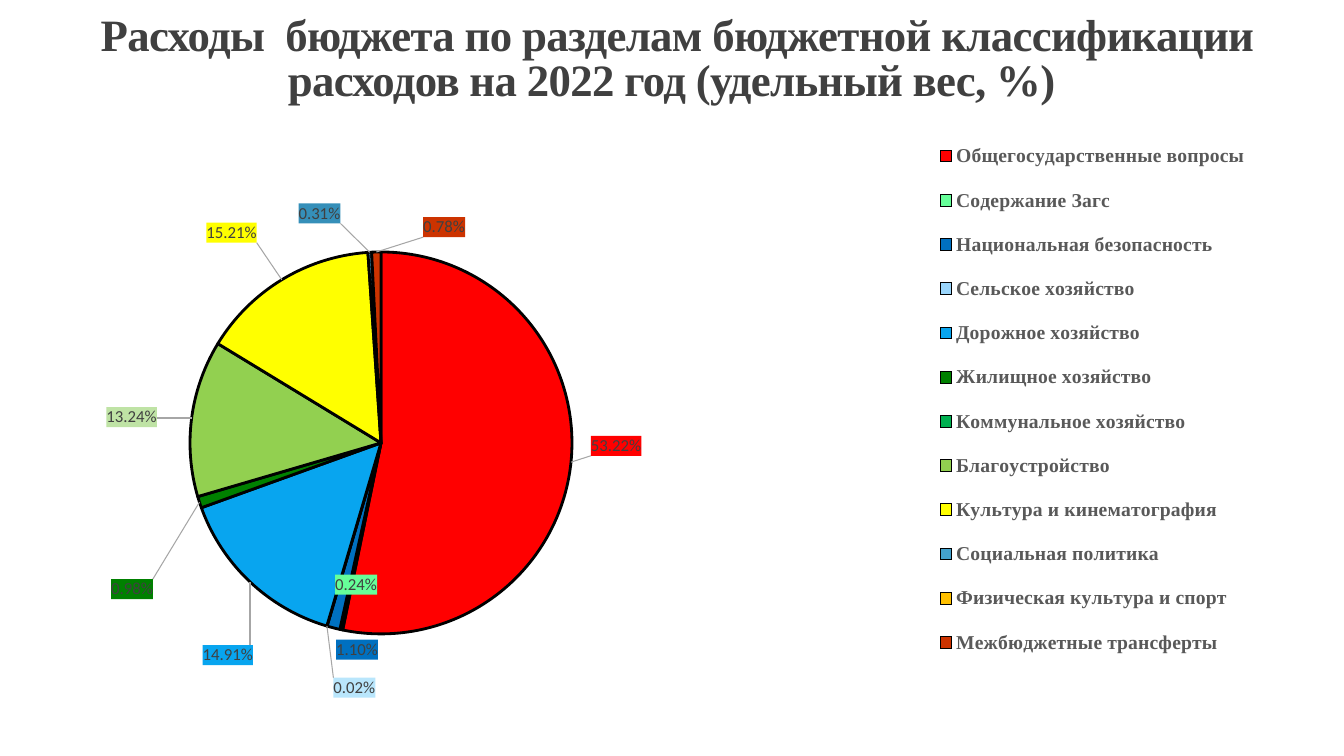
import pptx
import pptx.chart.data
import pptx.dml.color
import pptx.enum.chart
import pptx.enum.text
import pptx.oxml
import pptx.oxml.ns
import pptx.util

PX = 9071
CHART = (0, 103, 1344, 628)
PIE = (190, 252, 382, 382)
LEGEND = (920, 123, 345, 553)
COLORS = {"title": "404040", "legend": "595959", "outline": "000000", "leader": "A6A6A6"}
TITLE = " Расходы  бюджета по разделам бюджетной классификации расходов на 2022 год (удельный вес, %)"

# name, share, slice colour, label colour, label shift in px
SECTIONS = [
    ("Общегосударственные вопросы", 0.5322, "FF0000", "FF0000", (14, -27)),
    ("Содержание Загс", 0.0024, "66FF99", "66FF99", (37, -61)),
    ("Национальная безопасность", 0.011, "0070C0", "0070C0", (46, 6)),
    ("Сельское хозяйство", 0.0002, "9AD5FB", "B9E6FC", (50, 46)),
    ("Дорожное хозяйство", 0.1491, "08A5EF", "08A5EF", (7, 59)),
    ("Жилищное хозяйство", 0.0098, "008000", "008000", (-41, 75)),
    ("Коммунальное хозяйство", 0, "00B050", None, None),
    ("Благоустройство", 0.1324, "92D050", "BFE3A5", (-29, 10)),
    ("Культура и кинематография", 0.1521, "FFFF00", "FFFF00", (-22, -32)),
    ("Социальная политика", 0.0031, "43A2CE", "358FB9", (-50, -23)),
    ("Физическая культура и спорт", 0, "FFC000", None, None),
    ("Межбюджетные трансферты", 0.0078, "CC3300", "CC3300", (68, -9)),
]


def emu(*px):
    """Turn px lengths into EMU."""
    return [v * PX for v in px]


def rgb(value):
    """Return a colour from a hex string."""
    return pptx.dml.color.RGBColor.from_string(value)


def set_font(font, name, size, color, bold=False):
    """Set the main properties of a font."""
    font.name, font.size, font.bold = name, pptx.util.Pt(size), bold
    font.color.rgb = rgb(color)


def c_xml(body):
    """Parse a chart element from its markup."""
    ns = pptx.oxml.ns.nsdecls("c", "a")
    tag, rest = body.split(">", 1)
    return pptx.oxml.parse_xml(f"{tag} {ns}>{rest}")


def layout(x, y, size=None, inner=False):
    """Build a manual layout in fractions of the chart."""
    target = '<c:layoutTarget val="inner"/>' if inner else ""
    modes = '<c:xMode val="edge"/><c:yMode val="edge"/>' if size else ""
    extent = f'<c:w val="{size[0] / CHART[2]:.4f}"/><c:h val="{size[1] / CHART[3]:.4f}"/>' if size else ""
    return c_xml(f'<c:layout><c:manualLayout>{target}{modes}<c:x val="{x / CHART[2]:.4f}"/>'
                 f'<c:y val="{y / CHART[3]:.4f}"/>{extent}</c:manualLayout></c:layout>')


def frame_layout(box, inner=False):
    """Build the layout of a box given in slide px."""
    return layout(box[0] - CHART[0], box[1] - CHART[1], box[2:], inner)


def replace_layout(parent, new, after=None):
    """Put a layout in a chart part in place of its present one."""
    for old in parent.findall(pptx.oxml.ns.qn("c:layout")):
        parent.remove(old)
    if after is None:
        parent.insert(0, new)
    else:
        parent.find(pptx.oxml.ns.qn(after)).addnext(new)


def add_title(s):
    """Add the heading of the slide."""
    tf = s.shapes.add_textbox(*emu(27, 16, 1289, 95)).text_frame
    tf.word_wrap = True
    tf.vertical_anchor = pptx.enum.text.MSO_ANCHOR.BOTTOM
    p = tf.paragraphs[0]
    p.alignment = pptx.enum.text.PP_ALIGN.CENTER
    p.line_spacing = 0.85
    r = p.add_run()
    r.text = TITLE
    set_font(r.font, "Times New Roman", 32, COLORS["title"], True)
    r.font._element.set("spc", "-50")


def style_point(point, color):
    """Fill and outline one slice."""
    point.format.fill.solid()
    point.format.fill.fore_color.rgb = rgb(color)
    point.format.line.color.rgb = rgb(COLORS["outline"])
    point.format.line.width = pptx.util.Pt(2)


def add_label(chart, i, point, fill, shift):
    """Give one slice a filled and shifted label."""
    label = point.data_label
    set_font(label.font, "Calibri", 12, COLORS["title"])
    label.position = pptx.enum.chart.XL_LABEL_POSITION.OUTSIDE_END
    el = chart.element.xpath(f'.//c:dLbl[c:idx/@val="{i}"]')[0]
    replace_layout(el, layout(*shift), "c:idx")
    for old in el.findall(pptx.oxml.ns.qn("c:spPr")):
        el.remove(old)
    el.find(pptx.oxml.ns.qn("c:txPr")).addprevious(c_xml(
        f'<c:spPr><a:solidFill><a:srgbClr val="{fill}"/></a:solidFill></c:spPr>'))


def add_leader_lines(chart):
    """Join shifted labels to their slices."""
    labels = chart.element.xpath(".//c:ser/c:dLbls")[0]
    for old in labels.xpath("c:showLeaderLines | c:leaderLines"):
        labels.remove(old)
    labels.append(c_xml('<c:showLeaderLines val="1"/>'.replace("/>", "></c:showLeaderLines>")))
    labels.append(c_xml(f'<c:leaderLines><c:spPr><a:ln w="9525"><a:solidFill><a:srgbClr val="{COLORS["leader"]}"/>'
                        '</a:solidFill></a:ln></c:spPr></c:leaderLines>'))


def add_pie(s):
    """Add the pie of budget sections with its legend."""
    data = pptx.chart.data.CategoryChartData(number_format="0.00%")
    data.categories = [section[0] for section in SECTIONS]
    data.add_series("Series 1", [section[1] for section in SECTIONS])
    chart = s.shapes.add_chart(pptx.enum.chart.XL_CHART_TYPE.PIE, *emu(*CHART), data).chart
    chart.has_title = False
    set_font(chart.font, "Calibri", 10, COLORS["outline"])
    chart.plots[0].vary_by_categories = True
    series = chart.plots[0].series[0]
    series.data_labels.show_value = False
    for i, (_, _, color, fill, shift) in enumerate(SECTIONS):
        style_point(series.points[i], color)
        if shift:
            add_label(chart, i, series.points[i], fill, shift)
    add_leader_lines(chart)
    replace_layout(chart.element.xpath(".//c:plotArea")[0], frame_layout(PIE, True))
    chart.has_legend = True
    chart.legend.position = pptx.enum.chart.XL_LEGEND_POSITION.RIGHT
    chart.legend.include_in_layout = False
    set_font(chart.legend.font, "Times New Roman", 14, COLORS["legend"], True)
    replace_layout(chart.element.xpath(".//c:legend")[0], frame_layout(LEGEND), "c:legendPos")


def main():
    """Build and save the slide."""
    prs = pptx.Presentation()
    prs.slide_width, prs.slide_height = emu(1344, 756)
    s = prs.slides.add_slide(prs.slide_layouts[6])
    add_title(s)
    add_pie(s)
    prs.save("out.pptx")


if __name__ == "__main__":
    main()
